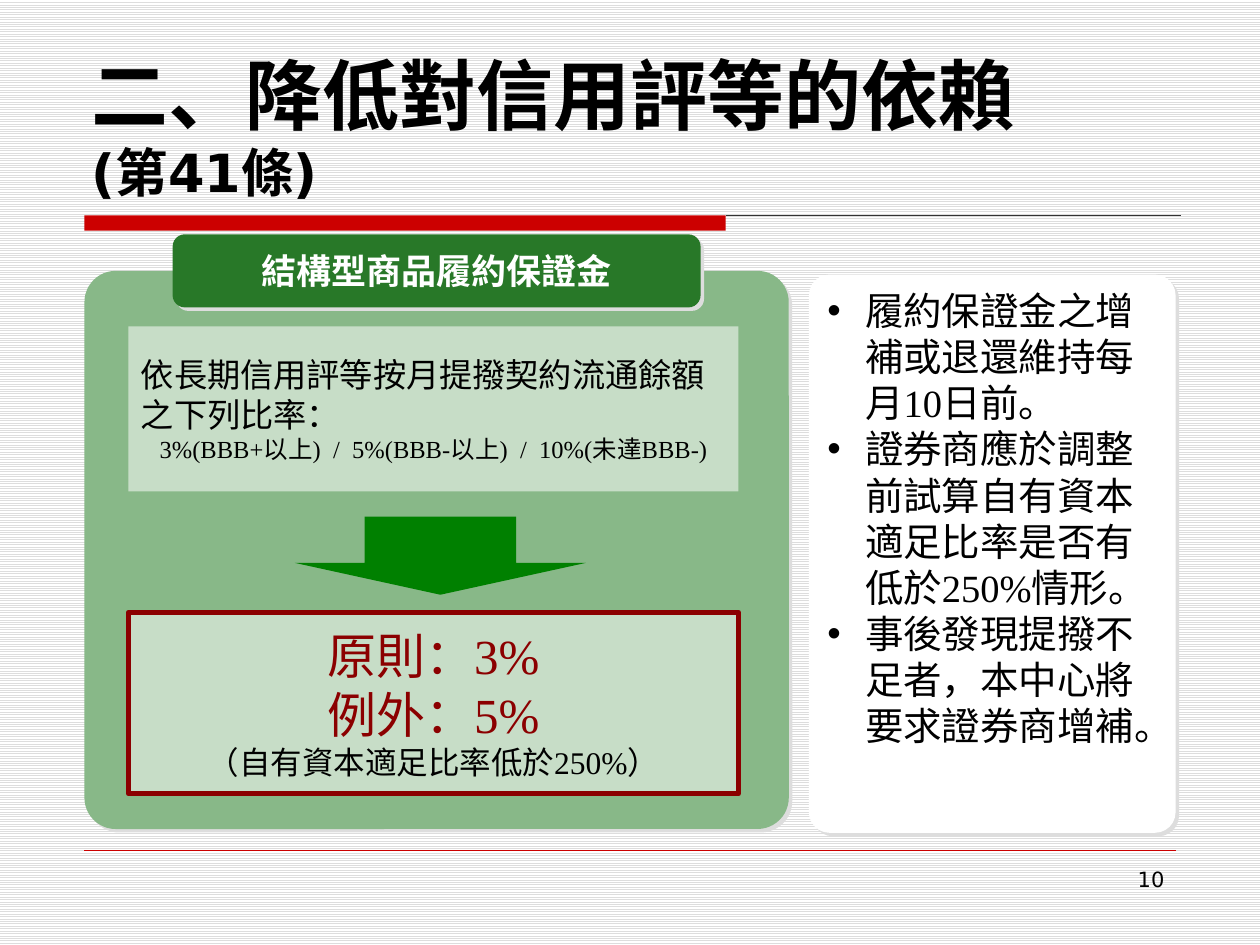
from dataclasses import dataclass
from typing import Optional

import lxml.etree
import pptx
import pptx.dml.color
import pptx.enum.dml
import pptx.enum.shapes
import pptx.enum.text
import pptx.oxml.ns
import pptx.util

Inches = pptx.util.Inches
Pt = pptx.util.Pt
Shapes = pptx.enum.shapes.MSO_SHAPE
Align = pptx.enum.text.PP_ALIGN
Anchor = pptx.enum.text.MSO_ANCHOR
qn = pptx.oxml.ns.qn

COLORS = {
    "black": "000000",
    "white": "FFFFFF",
    "stripe": "DDDDDD",
    "red": "CC0000",
    "rule": "333333",
    "panel": "88B888",
    "header": "287828",
    "box": "C7DDC7",
    "maroon": "8B0000",
    "arrow": "008000",
}
SERIF = "Times New Roman"
SANS = "DejaVu Sans"


@dataclass
class Line:
    text: str
    size: float
    color: str = "black"
    font: str = SERIF
    align: Align = Align.LEFT
    bold: bool = False
    bullet: bool = False


@dataclass
class Block:
    left: float
    top: float
    width: float
    height: float
    fill: str
    kind: Shapes = Shapes.RECTANGLE
    adjustments: tuple[float, ...] = ()
    border: Optional[str] = None
    shadow: bool = False
    anchor: Anchor = Anchor.MIDDLE
    wrap: bool = True
    lines: tuple[Line, ...] = ()


def rgb(name: str) -> pptx.dml.color.RGBColor:
    return pptx.dml.color.RGBColor.from_string(COLORS[name])


def style_font(font, line: Line) -> None:
    font.name = line.font
    font.size = Pt(line.size)
    font.bold = line.bold
    font.color.rgb = rgb(line.color)


def write_lines(frame, lines: tuple[Line, ...]) -> None:
    for index, line in enumerate(lines):
        paragraph = frame.add_paragraph() if index else frame.paragraphs[0]
        paragraph.text = line.text
        paragraph.alignment = line.align
        if line.bullet:
            properties = paragraph._p.get_or_add_pPr()
            properties.set("marL", str(Inches(0.3)))
            properties.set("indent", str(Inches(-0.3)))
            lxml.etree.SubElement(properties, qn("a:buFont"), typeface="Arial")
            lxml.etree.SubElement(properties, qn("a:buChar"), char="•")
        style_font(paragraph.font, line)


def add_offset_shadow(shape) -> None:
    effects = shape._element.spPr.find(qn("a:effectLst"))
    outer = lxml.etree.SubElement(
        effects, qn("a:outerShdw"), blurRad="0", dist=str(Pt(2.8)),
        dir=str(45 * 60000), algn="ctr", rotWithShape="0",
    )
    lxml.etree.SubElement(outer, qn("a:srgbClr"), val=COLORS["stripe"])


def add_block(slide, block: Block) -> None:
    shape = slide.shapes.add_shape(
        block.kind, Inches(block.left), Inches(block.top),
        Inches(block.width), Inches(block.height),
    )
    for index, value in enumerate(block.adjustments):
        shape.adjustments[index] = value
    shape.fill.solid()
    shape.fill.fore_color.rgb = rgb(block.fill)
    if block.border:
        shape.line.color.rgb = rgb(block.border)
        shape.line.width = Pt(3)
    else:
        shape.line.fill.background()
    shape.shadow.inherit = False
    if block.shadow:
        add_offset_shadow(shape)
    if block.lines:
        shape.text_frame.word_wrap = block.wrap
        shape.text_frame.vertical_anchor = block.anchor
        write_lines(shape.text_frame, block.lines)


def add_rule(slide, left: float, right: float, y: float, color: str, width: float) -> None:
    rule = slide.shapes.add_connector(
        pptx.enum.shapes.MSO_CONNECTOR.STRAIGHT,
        Inches(left), Inches(y), Inches(right), Inches(y),
    )
    rule.line.color.rgb = rgb(color)
    rule.line.width = Pt(width)
    lxml.etree.SubElement(rule._element.spPr, qn("a:effectLst"))


def add_text_frame(slide, left: float, top: float, width: float, height: float):
    frame = slide.shapes.add_textbox(
        Inches(left), Inches(top), Inches(width), Inches(height)
    ).text_frame
    frame.word_wrap = True
    return frame


def add_title(slide) -> None:
    frame = add_text_frame(slide, 0.63, 0.33, 8.75, 1.33)
    frame.vertical_anchor = Anchor.BOTTOM
    paragraph = frame.paragraphs[0]
    heading = Line("二、降低對信用評等的依賴", 44, font="Noto Sans CJK SC", bold=True)
    article = Line("(第41條)", 30, font=SANS, bold=True)
    for index, line in enumerate((heading, article)):
        if index:
            paragraph.add_line_break()
        run = paragraph.add_run()
        run.text = line.text
        style_font(run.font, line)


BLOCKS = (
    Block(0.67, 2.15, 5.59, 4.43, "panel", Shapes.ROUNDED_RECTANGLE, (0.056,), shadow=True),
    Block(
        1.37, 1.86, 4.19, 0.58, "header", Shapes.ROUNDED_RECTANGLE, (0.167,),
        shadow=True, wrap=False,
        lines=(Line("結構型商品履約保證金", 20, "white", "Arial", Align.CENTER, True),),
    ),
    Block(
        1.02, 2.59, 4.84, 1.31, "box",
        lines=(
            Line("依長期信用評等按月提撥契約流通餘額之下列比率：", 19),
            Line("3%(BBB+以上)  /  5%(BBB-以上)  /  10%(未達BBB-)", 14, align=Align.CENTER),
        ),
    ),
    Block(
        1.02, 4.86, 4.84, 1.44, "box", border="maroon",
        lines=(
            Line("原則：3%", 28, "maroon", align=Align.CENTER),
            Line("例外：5%", 28, "maroon", align=Align.CENTER),
            Line("（自有資本適足比率低於250%）", 18, align=Align.CENTER),
        ),
    ),
    Block(2.34, 4.1, 2.31, 0.62, "arrow", Shapes.DOWN_ARROW, (0.521, 0.407)),
    Block(
        6.42, 2.18, 2.91, 4.43, "white", Shapes.ROUNDED_RECTANGLE, (0.056,),
        shadow=True, anchor=Anchor.TOP,
        lines=tuple(
            Line(text, 22, bullet=True)
            for text in (
                "履約保證金之增補或退還維持每月10日前。",
                "證券商應於調整前試算自有資本適足比率是否有低於250%情形。",
                "事後發現提撥不足者，本中心將要求證券商增補。",
            )
        ),
    ),
)


def main() -> None:
    deck = pptx.Presentation()
    deck.slide_width, deck.slide_height = Inches(10), Inches(7.5)
    slide = deck.slides.add_slide(deck.slide_layouts[6])
    backdrop = slide.background.fill
    backdrop.patterned()
    backdrop.pattern = pptx.enum.dml.MSO_PATTERN.LIGHT_HORIZONTAL
    backdrop.fore_color.rgb = rgb("stripe")
    backdrop.back_color.rgb = rgb("white")
    add_block(slide, Block(0.67, 1.71, 5.09, 0.12, "red"))
    add_rule(slide, 5.76, 9.37, 1.71, "rule", 0.75)
    add_rule(slide, 0.67, 9.33, 6.75, "red", 0.25)
    add_title(slide)
    page_number = add_text_frame(slide, 7.17, 6.83, 2.17, 0.52)
    write_lines(page_number, (Line("10", 12, font=SANS, align=Align.RIGHT),))
    for block in BLOCKS:
        add_block(slide, block)
    deck.save("out.pptx")


if __name__ == "__main__":
    main()
